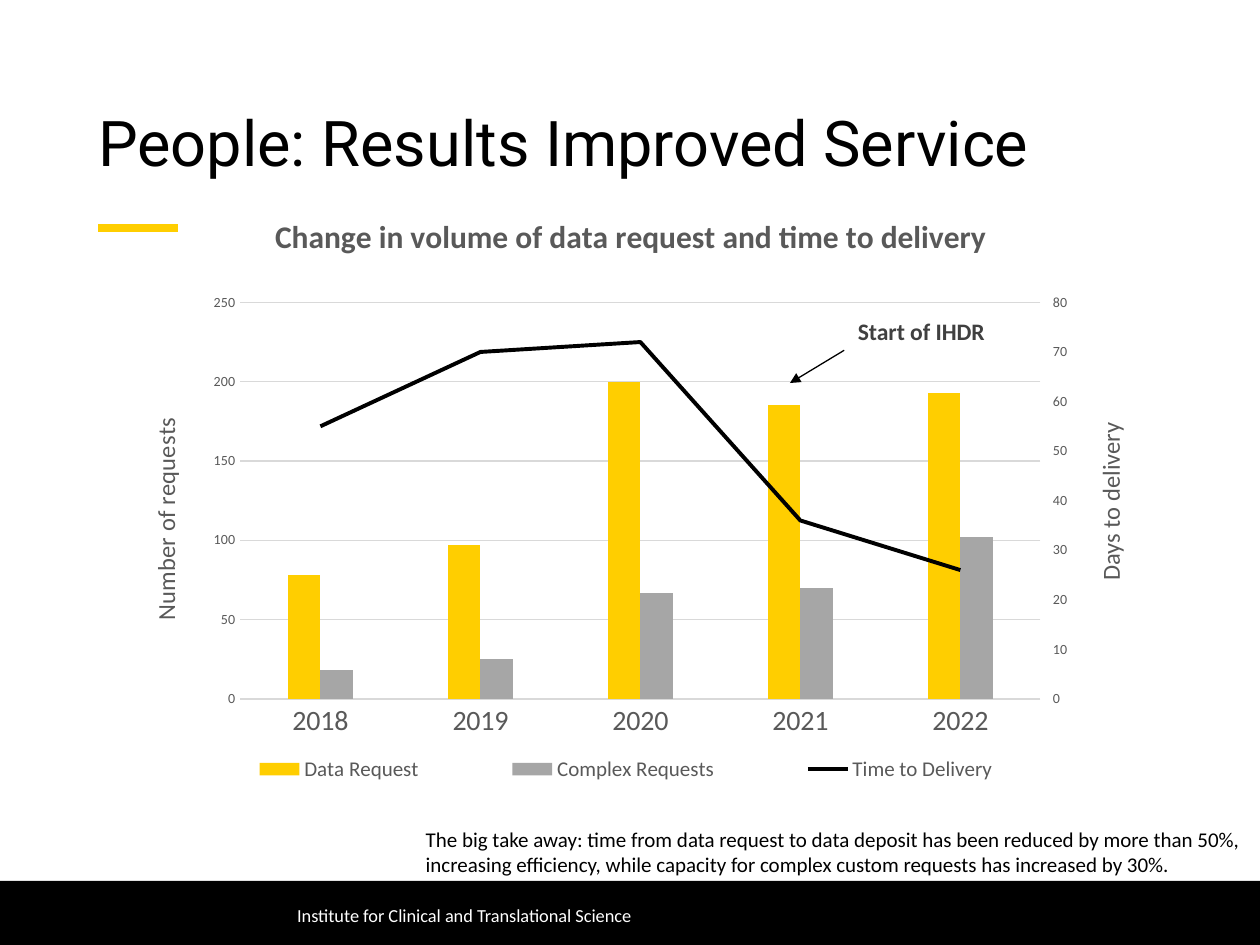
from pptx import Presentation
from pptx.chart.data import CategoryChartData
from pptx.dml.color import RGBColor
from pptx.enum import chart as ch, shapes, text
from pptx.oxml import parse_xml
from pptx.oxml.ns import nsdecls, qn
from pptx.util import Inches, Pt

YELLOW, GREY, BLACK, WHITE = "FFCE00", "A6A6A6", "000000", "FFFFFF"
LABEL, GRID, CALLOUT = "595959", "D9D9D9", "404040"


def color(value):
    return RGBColor.from_string(value)


def box(left, top, width, height):
    return tuple(Inches(n) for n in (left, top, width, height))


def style_font(font, size, shade, bold=False, name="Calibri"):
    font.size, font.bold, font.name = Pt(size), bold, name
    font.color.rgb = color(shade)


def add_text(slide, area, words, size, shade, bold=False, name="Calibri",
             middle=False, wrap=True, centered=False, inset=True):
    label = slide.shapes.add_textbox(*area)
    frame = label.text_frame
    frame.word_wrap = wrap
    if middle:
        frame.vertical_anchor = text.MSO_ANCHOR.MIDDLE
    if not inset:
        frame.margin_left = frame.margin_right = 0
        frame.margin_top = frame.margin_bottom = 0
    paragraph = frame.paragraphs[0]
    if centered:
        paragraph.alignment = text.PP_ALIGN.CENTER
    run = paragraph.add_run()
    run.text = words
    style_font(run.font, size, shade, bold, name)
    return label


def add_line(slide, start, end, shade, width, arrow=False):
    line = slide.shapes.add_connector(
        shapes.MSO_CONNECTOR.STRAIGHT, *(Inches(n) for n in start + end))
    line.line.color.rgb = color(shade)
    line.line.width = Pt(width)
    if arrow:
        line.line._get_or_add_ln().append(
            parse_xml(f'<a:tailEnd {nsdecls("a")} type="triangle"/>'))
    line._element.spPr.append(parse_xml(f'<a:effectLst {nsdecls("a")}/>'))


def place(part, inner=False, **fractions):
    """Give a chart part a fixed position, in fractions of the chart."""
    for old in part.findall(qn("c:layout")):
        part.remove(old)
    target = '<c:layoutTarget val="inner"/>' if inner else ""
    modes = "".join(f'<c:{k}Mode val="edge"/>' for k in "xy")
    values = "".join(f'<c:{k} val="{v}"/>' for k, v in fractions.items())
    layout = parse_xml(
        f'<c:layout {nsdecls("c")}><c:manualLayout>{target}{modes}{values}'
        '</c:manualLayout></c:layout>')
    part.insert(0 if inner else 1, layout)


def write_title(title, words, size, bold=False):
    run = title.text_frame.paragraphs[0].add_run()
    run.text = words
    style_font(run.font, size, LABEL, bold)


def move_to_right_axis(chart):
    """Turn the last series into a line measured on a second value axis."""
    plot_area = chart.element.xpath(".//c:plotArea")[0]
    bars = plot_area.find(qn("c:barChart"))
    delivery = bars.findall(qn("c:ser"))[-1]
    for flag in delivery.findall(qn("c:invertIfNegative")):
        delivery.remove(flag)
    lines = parse_xml(
        f'<c:lineChart {nsdecls("c")}><c:grouping val="standard"/>'
        '<c:varyColors val="0"/><c:marker val="1"/>'
        '<c:axId val="5001"/><c:axId val="5002"/></c:lineChart>')
    lines.insert(2, delivery)
    bars.addnext(lines)

    def axis(kind, number, other, hidden, side, limits, crosses):
        return parse_xml(
            f'<c:{kind} {nsdecls("c", "a")}><c:axId val="{number}"/>'
            f'<c:scaling><c:orientation val="minMax"/>{limits}</c:scaling>'
            f'<c:delete val="{hidden}"/><c:axPos val="{side}"/>'
            '<c:numFmt formatCode="General" sourceLinked="0"/>'
            '<c:majorTickMark val="out"/><c:minorTickMark val="none"/>'
            '<c:tickLblPos val="nextTo"/>'
            '<c:spPr><a:ln><a:noFill/></a:ln></c:spPr>'
            '<c:txPr><a:bodyPr/><a:p><a:pPr><a:defRPr sz="800"><a:solidFill>'
            f'<a:srgbClr val="{LABEL}"/></a:solidFill>'
            '<a:latin typeface="Calibri"/></a:defRPr></a:pPr></a:p></c:txPr>'
            f'<c:crossAx val="{other}"/><c:crosses val="{crosses}"/></c:{kind}>')

    last_axis = plot_area.findall(qn("c:valAx"))[-1]
    days = axis("valAx", 5002, 5001, 0, "r",
                '<c:max val="80"/><c:min val="0"/>', "max")
    last_axis.addnext(days)
    days.addnext(axis("catAx", 5001, 5002, 1, "b", "", "autoZero"))
    return plot_area


def add_requests_chart(slide, area):
    data = CategoryChartData()
    data.categories = ["2018", "2019", "2020", "2021", "2022"]
    data.add_series("Data Request", [78, 97, 200, 185, 193])
    data.add_series("Complex Requests", [18, 25, 67, 70, 102])
    data.add_series("Time to Delivery", [55, 70, 72, 36, 26])
    chart = slide.shapes.add_chart(
        ch.XL_CHART_TYPE.COLUMN_CLUSTERED, *area, data).chart
    style_font(chart.font, 10, BLACK)
    # Taken first: with two value axes, value_axis means the second one
    years, requests = chart.category_axis, chart.value_axis
    plot_area = move_to_right_axis(chart)
    place(plot_area, inner=True, x=0.12, y=0.16, w=0.83, h=0.68)

    # Series
    bars, lines = chart.plots
    bars.gap_width, bars.overlap, bars.vary_by_categories = 295, 0, False
    for series, shade in zip(bars.series, (YELLOW, GREY)):
        series.format.fill.solid()
        series.format.fill.fore_color.rgb = color(shade)
    delivery = lines.series[0]
    delivery.smooth = False
    delivery.marker.style = ch.XL_MARKER_STYLE.NONE
    delivery.format.line.color.rgb = color(BLACK)
    delivery.format.line.width = Pt(2.25)

    # Axes
    for axis, size in ((years, 16), (requests, 8)):
        style_font(axis.tick_labels.font, size, LABEL)
        axis.major_tick_mark = ch.XL_TICK_MARK.NONE
    requests.minimum_scale, requests.maximum_scale = 0, 250
    requests.major_unit = 50
    requests.format.line.fill.background()
    for line in (years.format.line, requests.major_gridlines.format.line):
        line.color.rgb = color(GRID)
        line.width = Pt(0.75)
    write_title(requests.axis_title, "Number of requests", 14)
    axis_title = plot_area.xpath("./c:valAx/c:title")[0]
    axis_title.xpath(".//a:bodyPr")[0].set("rot", "-5400000")
    place(axis_title, x=0.02, y=0.35)

    # Heading and legend
    write_title(chart.chart_title,
                "Change in volume of data request and time to delivery", 18, True)
    place(chart.element.xpath("./c:chart/c:title")[0], x=0.15, y=0)
    chart.has_legend = True
    chart.legend.position = ch.XL_LEGEND_POSITION.BOTTOM
    chart.legend.include_in_layout = False
    style_font(chart.legend.font, 12, LABEL)
    place(chart.element.xpath(".//c:legend")[0], x=0.05, y=0.92, w=0.94, h=0.08)


def add_heading(slide, area):
    title = add_text(slide, area, "People: Results Improved Service", 36, BLACK,
                     name="Roboto", middle=True, inset=False)
    title.text_frame.paragraphs[0].line_spacing = 0.9
    left, top, width, height = (n.inches for n in area)
    rule = top + height - 0.08
    add_line(slide, (left, rule), (left + 0.63, rule), YELLOW, 5)


def add_footer(slide, area):
    band = slide.shapes.add_shape(shapes.MSO_SHAPE.RECTANGLE, *area)
    band.shadow.inherit = False
    band.fill.solid()
    band.fill.fore_color.rgb = color(BLACK)
    band.line.fill.background()
    left, top, width, height = area
    add_text(slide, (left + Inches(2.26), top + Inches(0.02), Inches(3.09),
                     Inches(0.5)),
             "Institute for Clinical and Translational Science", 10.5, WHITE,
             middle=True)


def add_annotations(slide):
    add_line(slide, (6.7, 2.78), (6.27, 3.04), BLACK, 0.75, arrow=True)
    add_text(slide, box(6.71, 2.47, 1.3, 0.33), "Start of IHDR", 13.5, CALLOUT,
             bold=True, wrap=False)
    days = add_text(slide, box(8.08, 3.81, 1.47, 0.34), "Days to delivery", 14,
                    LABEL, wrap=False, centered=True)
    days.rotation = 270
    add_text(slide, box(3.28, 6.51, 7.29, 0.5),
             "The big take away: time from data request to data deposit has been "
             "reduced by more than 50%, increasing efficiency, while capacity for "
             "complex custom requests has increased by 30%.", 12, BLACK)


def main():
    deck = Presentation()
    deck.slide_width, deck.slide_height = Inches(10), Inches(7.5)
    slide = deck.slides.add_slide(deck.slide_layouts[6])
    add_heading(slide, box(0.78, 0.43, 8.44, 1.46))
    add_requests_chart(slide, box(0.99, 1.66, 7.65, 4.63))
    add_annotations(slide)
    add_footer(slide, box(0, 6.99, 10, 0.51))
    deck.save("out.pptx")


if __name__ == "__main__":
    main()
